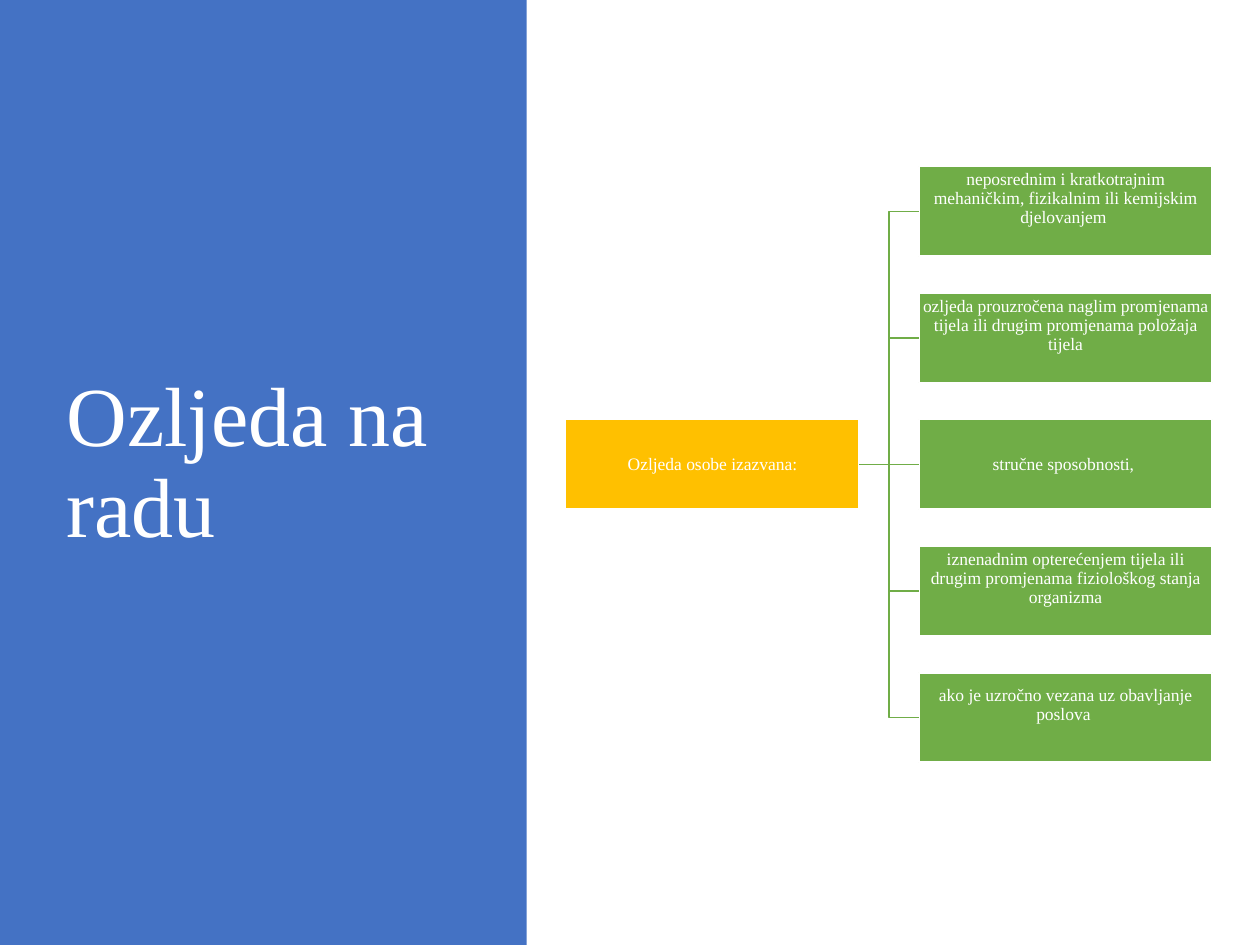
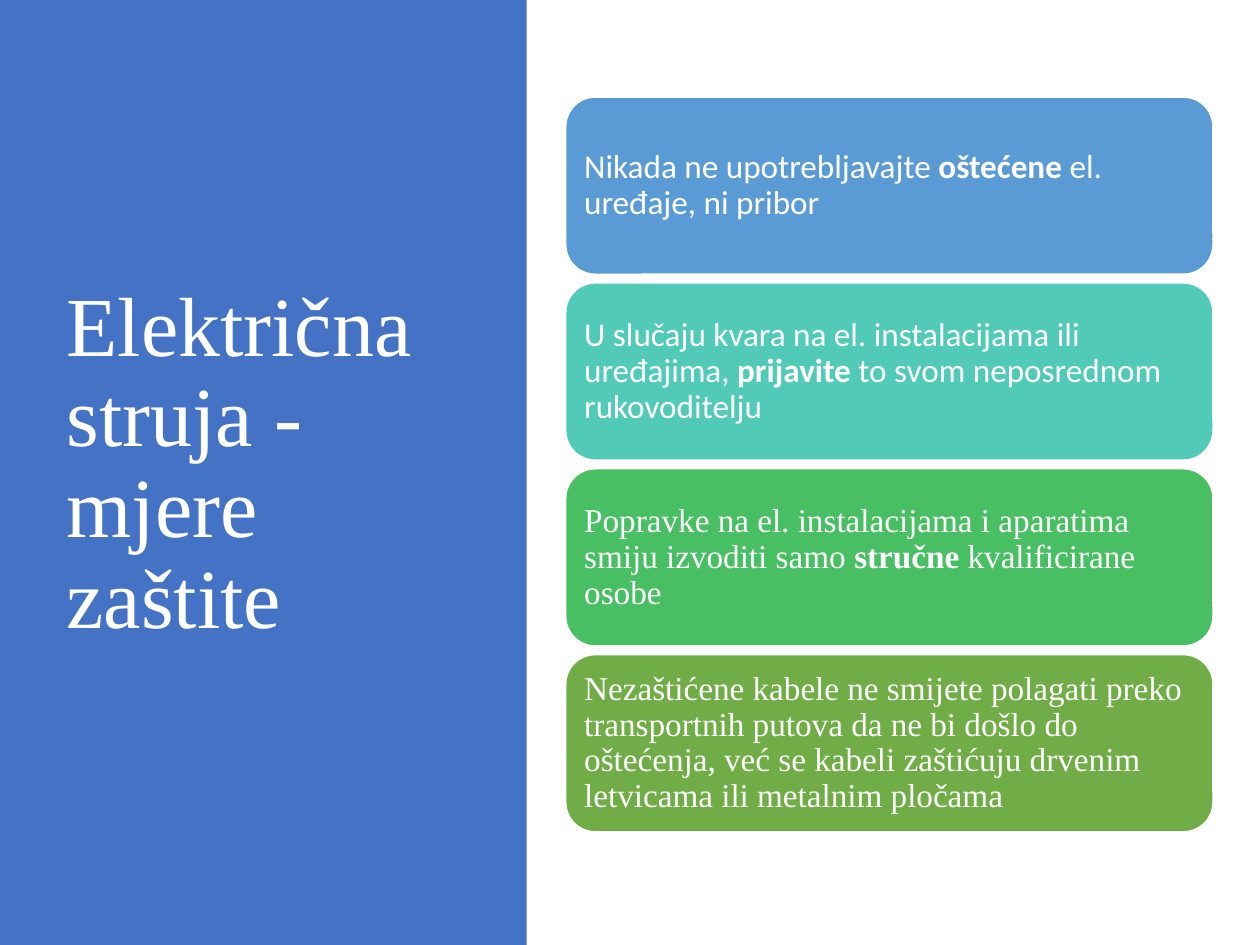
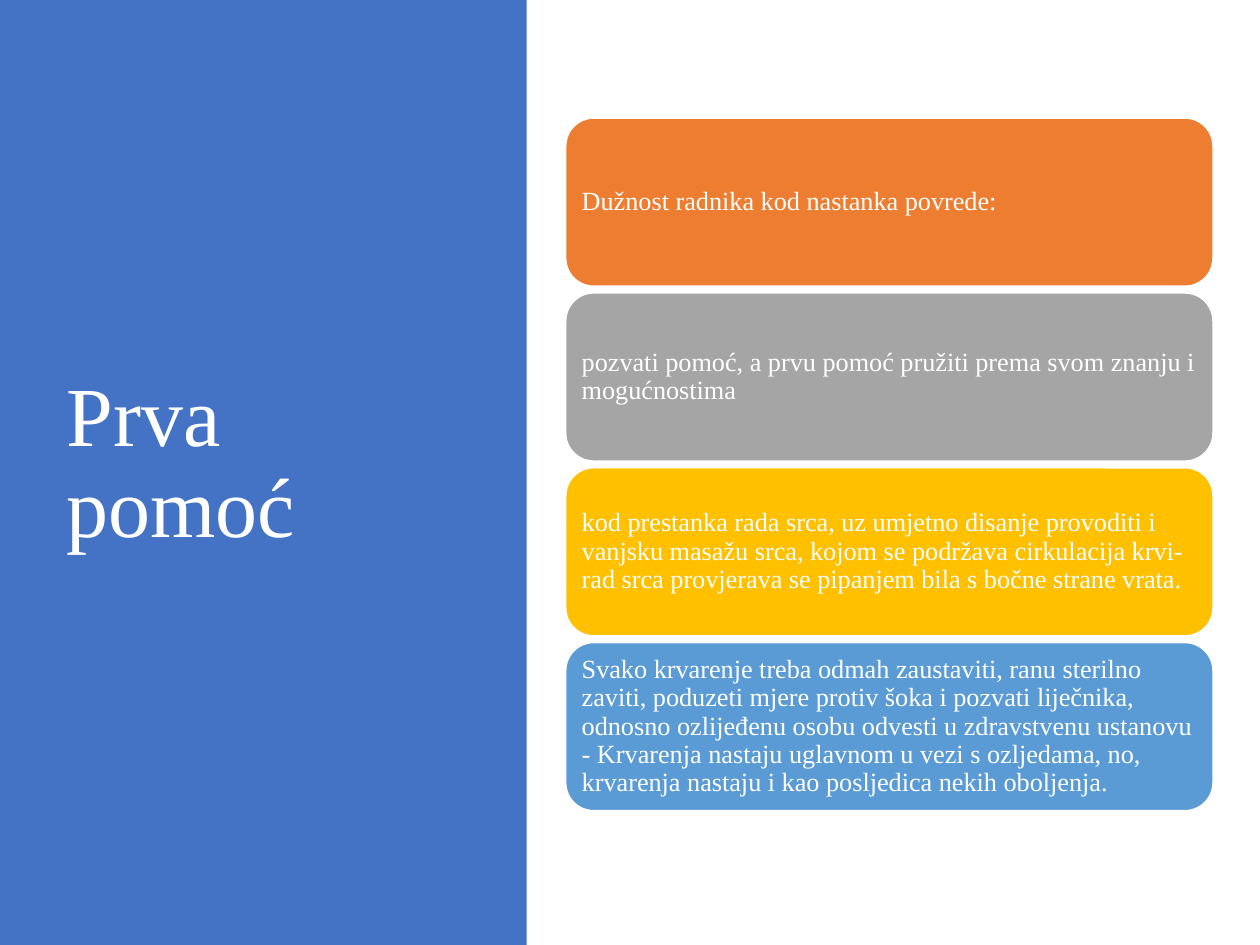
import pptx
import pptx.dml.color
import pptx.enum.shapes
import pptx.enum.text
import pptx.oxml.ns
import pptx.util
from lxml import etree

Pt = pptx.util.Pt
SHAPES = pptx.enum.shapes.MSO_SHAPE
CONNECTORS = pptx.enum.shapes.MSO_CONNECTOR
ALIGN = pptx.enum.text.PP_ALIGN
MIDDLE = pptx.enum.text.MSO_ANCHOR.MIDDLE
RGB = pptx.dml.color.RGBColor.from_string

COLORS = {
    "white": "FFFFFF",
    "panel": "4472C4",
    "gold": "FFC000",
    "green": "70AD47",
    "blue": "5B9BD5",
    "teal": "52CAB8",
    "emerald": "49BF64",
    "orange": "ED7D31",
    "gray": "A5A5A5",
}
SERIF = "Times New Roman"
SANS = "Calibri"
CONTENT_LEFT = 323.2
CONTENT_MIDDLE = 265.4


def write(shape, text, size, font, align, insets):
    """Fill the shape with one white paragraph; words between asterisks are bold."""
    frame = shape.text_frame
    frame.word_wrap = True
    frame.vertical_anchor = MIDDLE
    frame.margin_left, frame.margin_top, frame.margin_right, frame.margin_bottom = map(Pt, insets)
    paragraph = frame.paragraphs[0]
    paragraph.alignment = align
    paragraph.line_spacing = 0.9
    paragraph.font.size = Pt(size)
    paragraph.font.name = font
    paragraph.font.color.rgb = RGB(COLORS["white"])
    for index, part in enumerate(text.split("*")):
        run = paragraph.add_run()
        run.text = part
        if index % 2:
            run.font.bold = True


def add_block(slide, kind, left, top, width, height, color, outlined=True):
    block = slide.shapes.add_shape(kind, Pt(left), Pt(top), Pt(width), Pt(height))
    block.shadow.inherit = False
    block.fill.solid()
    block.fill.fore_color.rgb = RGB(COLORS[color])
    if outlined:
        block.line.color.rgb = RGB(COLORS["white"])
        block.line.width = Pt(1)
    else:
        block.line.fill.background()
    return block


presentation = pptx.Presentation()
presentation.slide_width, presentation.slide_height = Pt(720), Pt(540)

# Blue title panel on every slide
slides = []
for title in ("Ozljeda na radu", "Električna struja - mjere zaštite", "Prva pomoć"):
    slide = presentation.slides.add_slide(presentation.slide_layouts[6])
    add_block(slide, SHAPES.RECTANGLE, 0, 0, 301, 540, "panel", outlined=False)
    heading = slide.shapes.add_textbox(Pt(31), Pt(49), Pt(224.6), Pt(433.4))
    write(heading, title, 48, SERIF, ALIGN.LEFT, (7.2, 3.6, 7.2, 3.6))
    slides.append(slide)
injury_slide, electricity_slide, first_aid_slide = slides

# Injury at work: one root and its causes; the third value is extra room below the text
causes = [
    ("neposrednim i kratkotrajnim mehaničkim, fizikalnim ili kemijskim djelovanjem ", 14),
    ("ozljeda prouzročena naglim promjenama tijela ili drugim promjenama položaja tijela", 14),
    ("stručne sposobnosti, ", 0),
    ("iznenadnim opterećenjem tijela ili drugim promjenama fiziološkog stanja organizma", 14),
    ("ako je uzročno vezana uz obavljanje poslova ", 14),
]
CAUSE_LEFT, CAUSE_WIDTH, CAUSE_HEIGHT, CAUSE_PITCH = 525, 167.8, 51.2, 72.3
middle_top = CONTENT_MIDDLE - CAUSE_HEIGHT / 2
injury = add_block(injury_slide, SHAPES.RECTANGLE, CONTENT_LEFT, middle_top,
                   CAUSE_WIDTH, CAUSE_HEIGHT, "gold")
write(injury, "Ozljeda osobe izazvana:", 10, SERIF, ALIGN.CENTER, (0.5, 0.5, 0.5, 0.5))
for row, (text, room_below) in enumerate(causes):
    offset = row - len(causes) // 2
    cause = add_block(injury_slide, SHAPES.RECTANGLE, CAUSE_LEFT,
                      middle_top + offset * CAUSE_PITCH, CAUSE_WIDTH, CAUSE_HEIGHT, "green")
    write(cause, text, 10, SERIF, ALIGN.CENTER, (0.5, 0.5, 0.5, 0.5 + room_below))
    branch = injury_slide.shapes.add_connector(
        CONNECTORS.ELBOW if offset else CONNECTORS.STRAIGHT,
        Pt(CONTENT_LEFT + CAUSE_WIDTH), Pt(CONTENT_MIDDLE),
        Pt(CAUSE_LEFT), Pt(CONTENT_MIDDLE + offset * CAUSE_PITCH))
    branch.begin_connect(injury, 3)
    branch.end_connect(cause, 1)
    branch.line.color.rgb = RGB(COLORS["green"])
    branch.line.width = Pt(1)
    etree.SubElement(branch._element.spPr, pptx.oxml.ns.qn("a:effectLst"))

# Electricity and first aid: a column of rounded cards
electricity_rules = [
    ("blue", SANS, "Nikada ne upotrebljavajte *oštećene* el. uređaje, ni pribor"),
    ("teal", SANS, "U slučaju kvara na el. instalacijama ili uređajima, *prijavite* to svom "
                   "neposrednom rukovoditelju"),
    ("emerald", SERIF, "Popravke na el. instalacijama i aparatima smiju izvoditi samo *stručne* "
                       "kvalificirane osobe"),
    ("green", SERIF, "Nezaštićene kabele ne smijete polagati preko transportnih putova da ne bi "
                     "došlo do oštećenja, već se kabeli zaštićuju drvenim letvicama ili metalnim "
                     "pločama"),
]
first_aid_duties = [
    ("orange", SERIF, "Dužnost radnika kod nastanka povrede:"),
    ("gray", SERIF, "pozvati pomoć, a prvu pomoć pružiti prema svom znanju i mogućnostima"),
    ("gold", SERIF, "kod prestanka rada srca, uz umjetno disanje provoditi i vanjsku masažu srca, "
                    "kojom se podržava cirkulacija krvi- rad srca provjerava se pipanjem bila s "
                    "bočne strane vrata."),
    ("blue", SERIF, "Svako krvarenje treba odmah zaustaviti, ranu sterilno zaviti, poduzeti mjere "
                    "protiv šoka i pozvati liječnika, odnosno ozlijeđenu osobu odvesti u "
                    "zdravstvenu ustanovu - Krvarenja nastaju uglavnom u vezi s ozljedama, no, "
                    "krvarenja nastaju i kao posljedica nekih oboljenja."),
]
for slide, cards, size, height, pitch in (
    (electricity_slide, electricity_rules, 19, 101.4, 106.2),
    (first_aid_slide, first_aid_duties, 15, 96.2, 99.9),
):
    first_top = CONTENT_MIDDLE - (height + pitch * (len(cards) - 1)) / 2
    for row, (color, font, text) in enumerate(cards):
        card = add_block(slide, SHAPES.ROUNDED_RECTANGLE, CONTENT_LEFT, first_top + row * pitch,
                         370, height, color)
        write(card, text, size, font, ALIGN.LEFT, [0.3 * size] * 4)

presentation.save("out.pptx")
